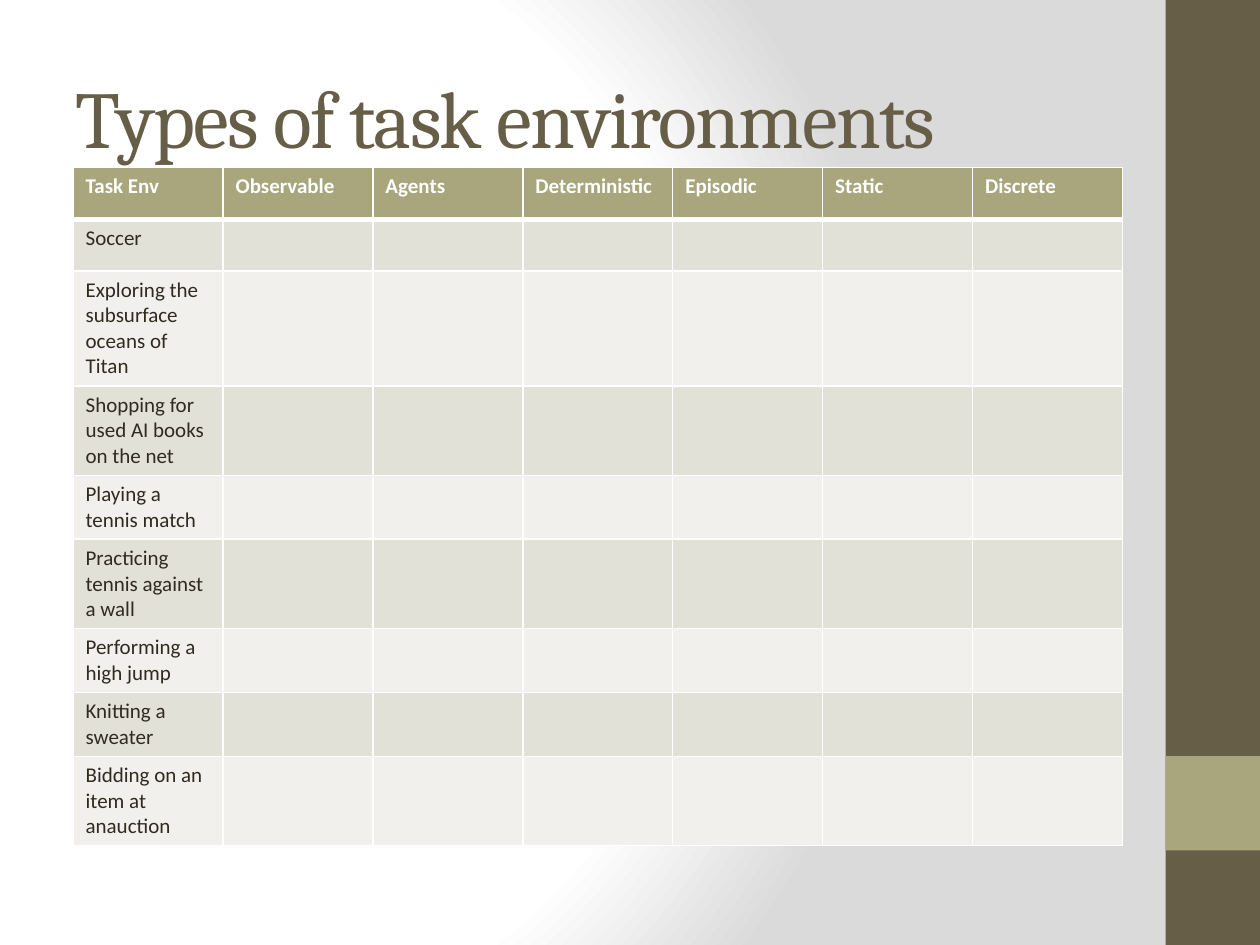
from lxml import etree
from pptx import Presentation
from pptx import util as u
from pptx.dml.color import RGBColor
from pptx.enum import shapes, text
from pptx.oxml import parse_xml
from pptx.oxml.ns import nsdecls, qn

COLORS = {
    "white": "FFFFFF",
    "gray": "DADADA",
    "brown": "675E47",
    "olive": "A9A57C",
    "ink": "2F2B20",
    "band_dark": "E2E1D7",
    "band_light": "F1F0EC",
}
HEADERS = ["Task Env", "Observable", "Agents", "Deterministic", "Episodic", "Static", "Discrete"]
TASKS = [
    "Soccer",
    "Exploring the subsurface oceans of Titan",
    "Shopping for used AI books on the net",
    "Playing a tennis match",
    "Practicing tennis against a wall",
    "Performing a high jump",
    "Knitting a sweater",
    "Bidding on an item at anauction",
]


class SlideBuilder:
    heading_font = "Cambria"
    body_font = "Calibri"

    def __init__(self, slide):
        self.slide = slide

    def color(self, name):
        return RGBColor.from_string(COLORS[name])

    def background(self, stops):
        self.slide.background.fill.solid()
        properties = self.slide.element.find(".//" + qn("p:bgPr"))
        stop_list = "".join(
            f'<a:gs pos="{percent * 1000}"><a:srgbClr val="{COLORS[name]}"/></a:gs>'
            for percent, name in stops
        )
        gradient = parse_xml(
            f'<a:gradFill {nsdecls("a")} rotWithShape="1"><a:gsLst>{stop_list}</a:gsLst>'
            '<a:path path="circle"><a:fillToRect l="20000" t="50000" r="100000" b="50000"/>'
            "</a:path></a:gradFill>"
        )
        properties.replace(properties[0], gradient)

    def rectangle(self, left, top, width, height, fill):
        shape = self.slide.shapes.add_shape(
            shapes.MSO_SHAPE.RECTANGLE, *map(u.Inches, (left, top, width, height))
        )
        shape.shadow.inherit = False
        shape.fill.solid()
        shape.fill.fore_color.rgb = self.color(fill)
        shape.line.fill.background()

    def style(self, paragraph, font, size, color, bold=False):
        paragraph.font.name = font
        paragraph.font.size = u.Pt(size)
        paragraph.font.bold = bold
        paragraph.font.color.rgb = self.color(color)

    def title(self, words, left, top, width, height):
        title = self.slide.shapes.title
        title.left, title.top, title.width, title.height = map(
            u.Inches, (left, top, width, height)
        )
        frame = title.text_frame
        frame.text = words
        frame.word_wrap = True
        frame.auto_size = text.MSO_AUTO_SIZE.NONE
        frame.vertical_anchor = text.MSO_ANCHOR.MIDDLE
        paragraph = frame.paragraphs[0]
        paragraph.alignment = text.PP_ALIGN.LEFT
        self.style(paragraph, self.heading_font, 46, "brown")
        paragraph.runs[0].font._element.set("spc", "-100")

    def borders(self, cell, top=1, bottom=1):
        properties = cell._tc.get_or_add_tcPr()
        widths = {"lnL": 1, "lnR": 1, "lnT": top, "lnB": bottom}
        for index, (side, points) in enumerate(widths.items()):
            line = etree.Element(qn(f"a:{side}"), w=str(u.Pt(points)))
            fill = etree.SubElement(line, qn("a:solidFill"))
            etree.SubElement(fill, qn("a:srgbClr"), val=COLORS["white"])
            properties.insert(index, line)

    def table(self, headers, tasks, left, top, width, row_height):
        row_count = len(tasks) + 1
        table = self.slide.shapes.add_table(
            row_count, len(headers),
            *map(u.Inches, (left, top, width, row_height * row_count)),
        ).table
        for column, header in enumerate(headers):
            words = [header] + (tasks if column == 0 else [""] * len(tasks))
            for row, label in enumerate(words):
                cell = table.cell(row, column)
                cell.text = label
                is_header = row == 0
                band = "band_dark" if row % 2 else "band_light"
                cell.fill.solid()
                cell.fill.fore_color.rgb = self.color("olive" if is_header else band)
                self.style(cell.text_frame.paragraphs[0], self.body_font, 12,
                           "white" if is_header else "ink", is_header)
                self.borders(cell, top=3 if row == 1 else 1, bottom=3 if is_header else 1)


def main():
    presentation = Presentation()
    presentation.slide_width = u.Inches(10)
    presentation.slide_height = u.Inches(7.5)
    builder = SlideBuilder(presentation.slides.add_slide(presentation.slide_layouts[5]))
    builder.background([(0, "white"), (75, "white"), (100, "gray")])
    builder.rectangle(9.25, 0, 0.75, 7.5, "brown")
    builder.rectangle(9.25, 6, 0.75, 0.75, "olive")
    builder.title("Types of task environments", 0.5, 0.3, 8.33, 1.25)
    builder.table(HEADERS, TASKS, 0.58, 1.33, 8.33, 0.41)
    presentation.save("out.pptx")


if __name__ == "__main__":
    main()
